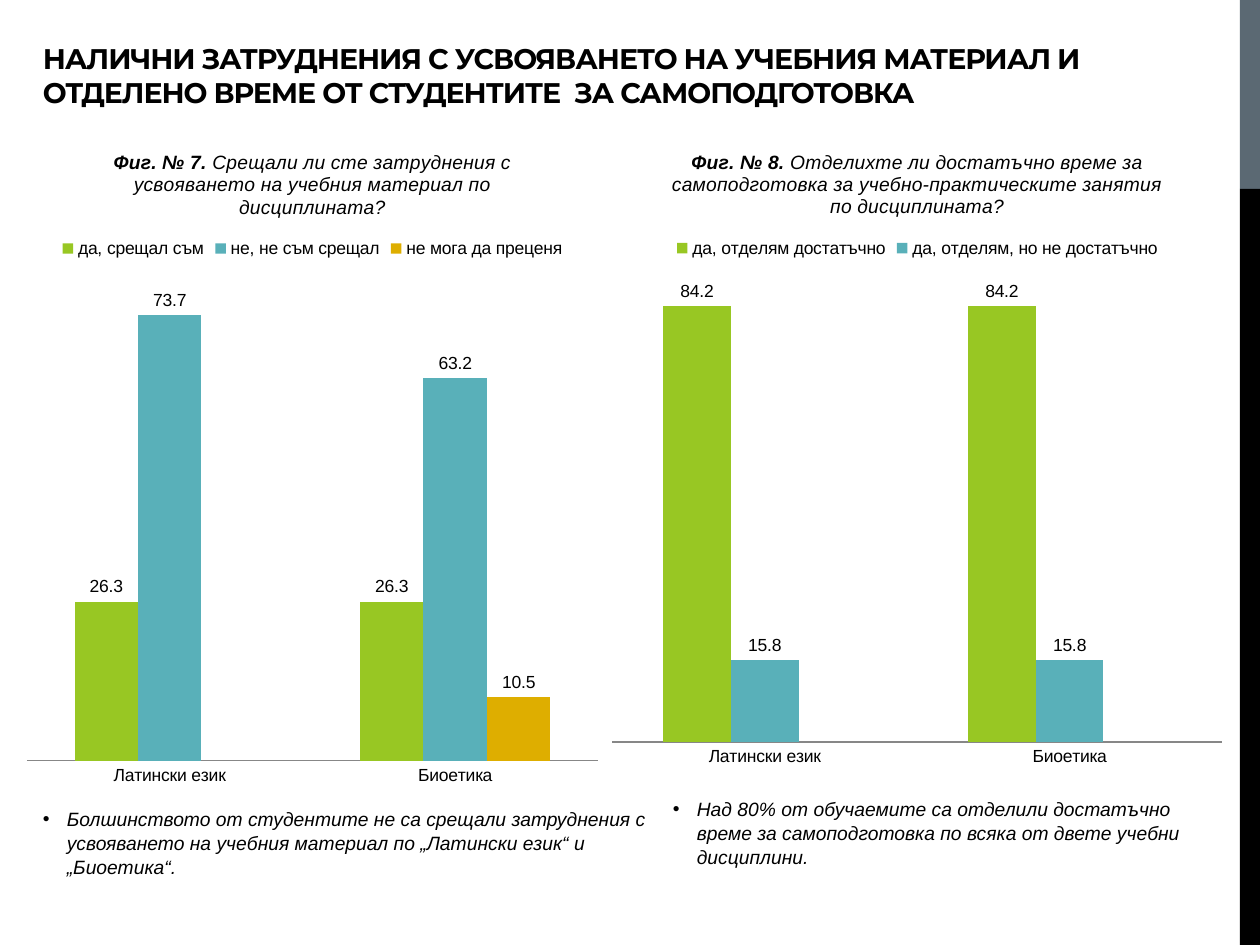
import pptx
import pptx.chart.data
import pptx.dml.color
import pptx.enum.chart
import pptx.enum.shapes
import pptx.enum.text
import pptx.oxml
import pptx.oxml.ns
import pptx.util
from pptx.util import Inches

RGBColor = pptx.dml.color.RGBColor
BLACK = RGBColor(0x00, 0x00, 0x00)
SLATE = RGBColor(0x5B, 0x69, 0x73)
GRAY = RGBColor(0x87, 0x87, 0x87)
GREEN = RGBColor(0x98, 0xC7, 0x23)
TEAL = RGBColor(0x59, 0xB0, 0xB9)
AMBER = RGBColor(0xDE, 0xAE, 0x00)
SERIES_COLORS = (GREEN, TEAL, AMBER)
SUBJECTS = ("Латински език", "Биоетика")


class SurveySlide:
    """Holds the style and the slide that the elements are placed on."""

    heading_font = "Montserrat"
    body_font = "Arial"

    def __init__(self, slide):
        self.slide = slide

    def style(self, font, size, name=body_font, bold=False, italic=False):
        font.name = name
        font.size = pptx.util.Pt(size)
        font.bold = bold
        font.italic = italic
        font.color.rgb = BLACK

    def place(self, shape, left, top, width, height):
        shape.left, shape.top = Inches(left), Inches(top)
        shape.width, shape.height = Inches(width), Inches(height)

    def band(self, top, height, color):
        shape = self.slide.shapes.add_shape(
            pptx.enum.shapes.MSO_SHAPE.RECTANGLE,
            Inches(9.84), Inches(top), Inches(0.16), Inches(height))
        shape.shadow.inherit = False
        shape.fill.solid()
        shape.fill.fore_color.rgb = color
        shape.line.fill.background()

    def title(self, text, *box):
        shape = self.slide.shapes.title
        self.place(shape, *box)
        frame = shape.text_frame
        frame.text = text
        frame.auto_size = pptx.enum.text.MSO_AUTO_SIZE.NONE
        frame.vertical_anchor = pptx.enum.text.MSO_ANCHOR.BOTTOM
        paragraph = frame.paragraphs[0]
        paragraph.alignment = pptx.enum.text.PP_ALIGN.LEFT
        run = paragraph.runs[0]
        self.style(run.font, 16.2, self.heading_font, bold=True)
        run.font._element.set("spc", "-60")

    def bullet(self, index, text, *box):
        shape = self.slide.placeholders[index]
        self.place(shape, *box)
        frame = shape.text_frame
        frame.text = text
        frame.auto_size = pptx.enum.text.MSO_AUTO_SIZE.NONE
        paragraph = frame.paragraphs[0]
        properties = paragraph._p.get_or_add_pPr()
        properties.set("marL", str(Inches(0.19)))
        properties.set("indent", str(-Inches(0.19)))
        paragraph.space_before = pptx.util.Pt(0)
        paragraph.space_after = pptx.util.Pt(10)
        paragraph.line_spacing = 1.04
        self.style(paragraph.runs[0].font, 11, italic=True)

    def chart(self, number, question, series, maximum, *box, hidden_entry=None):
        data = pptx.chart.data.CategoryChartData(number_format="0.0")
        data.categories = SUBJECTS
        for name, values in series:
            data.add_series(name, values)
        kinds = pptx.enum.chart
        chart = self.slide.shapes.add_chart(
            kinds.XL_CHART_TYPE.COLUMN_CLUSTERED,
            *(Inches(length) for length in box), data).chart
        self.style(chart.font, 10)

        chart.has_title = True
        chart.chart_title.include_in_layout = False
        paragraph = chart.chart_title.text_frame.paragraphs[0]
        for text, bold in ((number, True), (" " + question, False)):
            run = paragraph.add_run()
            run.text = text
            self.style(run.font, 11, bold=bold, italic=True)

        chart.has_legend = True
        chart.legend.position = kinds.XL_LEGEND_POSITION.TOP
        chart.legend.include_in_layout = False
        self.style(chart.legend.font, 10)
        if hidden_entry is not None:
            chart.legend._element.insert(1, pptx.oxml.parse_xml(
                f'<c:legendEntry {pptx.oxml.ns.nsdecls("c")}>'
                f'<c:idx val="{hidden_entry}"/><c:delete val="1"/></c:legendEntry>'))

        value_axis = chart.value_axis
        value_axis.minimum_scale = 0
        value_axis.maximum_scale = maximum
        value_axis.has_major_gridlines = False
        value_axis.visible = False
        category_axis = chart.category_axis
        category_axis.major_tick_mark = kinds.XL_TICK_MARK.NONE
        category_axis.format.line.color.rgb = GRAY
        category_axis.format.line.width = pptx.util.Pt(0.75)

        plot = chart.plots[0]
        plot.gap_width = 150
        plot.overlap = 0
        plot.vary_by_categories = False
        for column, color in zip(plot.series, SERIES_COLORS):
            column.format.fill.solid()
            column.format.fill.fore_color.rgb = color
            labels = column.data_labels
            labels.show_value = True
            labels.number_format = "0.0"
            labels.number_format_is_linked = False
            labels.position = kinds.XL_LABEL_POSITION.OUTSIDE_END
            self.style(labels.font, 10)


def main():
    presentation = pptx.Presentation()
    presentation.slide_width, presentation.slide_height = Inches(10), Inches(7.5)
    page = SurveySlide(presentation.slides.add_slide(presentation.slide_layouts[3]))

    page.band(0, 1.5, SLATE)
    page.band(1.5, 6, BLACK)
    page.title("НАЛИЧНИ ЗАТРУДНЕНИЯ С УСВОЯВАНЕТО НА УЧЕБНИЯ МАТЕРИАЛ И "
               "ОТДЕЛЕНО ВРЕМЕ ОТ СТУДЕНТИТЕ  ЗА САМОПОДГОТОВКА",
               0.24, 0.21, 9.45, 0.71)
    page.bullet(1, "Болшинството от студентите не са срещали затруднения с "
                "усвояването на учебния материал по „Латински език“ и „Биоетика“.",
                0.24, 6.35, 5.23, 0.79)
    page.bullet(2, "Над 80% от обучаемите са отделили достатъчно време за "
                "самоподготовка по всяка от двете учебни дисциплини.",
                5.24, 6.27, 4.57, 0.87)
    page.chart("Фиг. № 7.",
               "Срещали ли сте затруднения с усвояването на учебния материал "
               "по дисциплината?",
               (("да, срещал съм", (26.3, 26.3)),
                ("не, не съм срещал", (73.7, 63.2)),
                ("не мога да преценя", (None, 10.5))),
               80, 0.12, 0.99, 4.72, 5.35)
    page.chart("Фиг. № 8.",
               "Отделихте ли достатъчно време за самоподготовка за "
               "учебно-практическите занятия по дисциплината?",
               (("да, отделям достатъчно", (84.2, 84.2)),
                ("да, отделям, но не достатъчно", (15.8, 15.8)),
                ("Series 3", (None, None))),
               90, 4.76, 0.99, 5.04, 5.2, hidden_entry=2)

    presentation.save("out.pptx")


if __name__ == "__main__":
    main()
